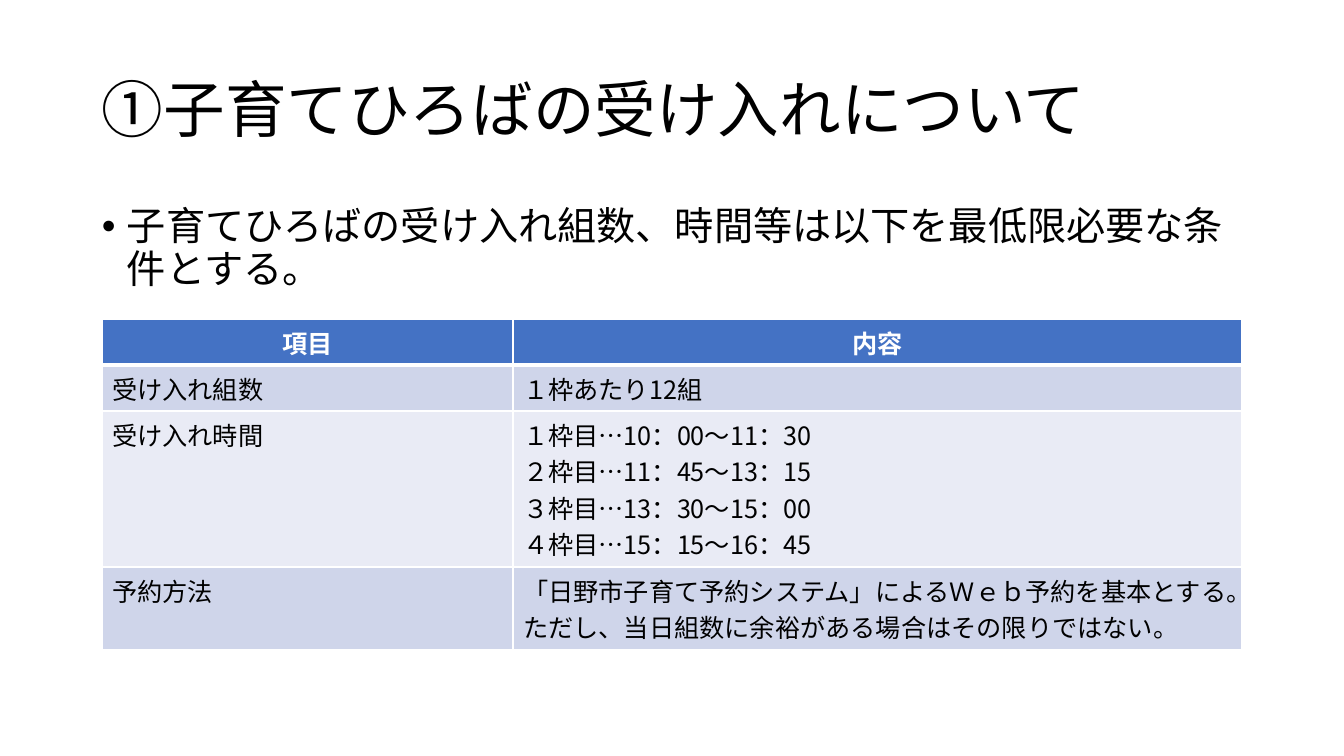
import pptx
import pptx.dml.color
import pptx.enum.text
import pptx.oxml
import pptx.oxml.ns
import pptx.util

FONT = "Noto Sans CJK JP"
ALIGN = pptx.enum.text.PP_ALIGN
ANCHOR = pptx.enum.text.MSO_ANCHOR
SCALE = 12192000 / 1344
WHITE, BLACK, BLUE = "FFFFFF", "000000", "4472C4"
BANDS = ["CFD5EA", "E9EBF5"]


def px(length):
    return pptx.util.Emu(round(length * SCALE))


def colour(code):
    return pptx.dml.color.RGBColor.from_string(code)


def assign(target, values):
    for name, value in values.items():
        setattr(target, name, value)


def element(markup):
    head, rest = markup.split(" ", 1)
    return pptx.oxml.parse_xml(f"{head} {pptx.oxml.ns.nsdecls('a')} {rest}")


class SlideBuilder:
    """Hold the style and the current page, and add elements to it."""

    def __init__(self, page):
        self.page = page

    def fill_text(self, frame, lines, size, code, bold=False, **layout):
        for index, line in enumerate(lines):
            para = frame.paragraphs[0] if index == 0 else frame.add_paragraph()
            assign(para, layout)
            span = para.add_run()
            span.text = line
            assign(span.font, {"name": FONT, "size": pptx.util.Pt(size), "bold": bold})
            span.font.color.rgb = colour(code)
            span.font._element.append(element(f'<a:ea typeface="{FONT}"/>'))

    def text(self, place, line, size, anchor, **layout):
        box = self.page.shapes.add_textbox(*map(px, place))
        assign(box.text_frame, {"word_wrap": True, "vertical_anchor": anchor})
        self.fill_text(box.text_frame, [line], size, BLACK, line_spacing=0.9, **layout)
        return box.text_frame.paragraphs[0]

    def bullet(self, para, indent):
        properties = para._p.get_or_add_pPr()
        properties.set("marL", str(px(indent)))
        properties.set("indent", str(-px(indent)))
        properties.append(element('<a:buFont typeface="Arial"/>'))
        properties.append(element('<a:buChar char="•"/>'))

    def borders(self, cell, widths):
        for side, width in widths.items():
            cell._tc.get_or_add_tcPr().append(element(
                f'<a:ln{side} w="{pptx.util.Pt(width)}"><a:solidFill>'
                f'<a:srgbClr val="{WHITE}"/></a:solidFill></a:ln{side}>'))

    def table(self, left, top, widths, heights, rows):
        place = map(px, (left, top, sum(widths), sum(heights)))
        grid = self.page.shapes.add_table(len(rows), len(widths), *place).table
        for column, width in zip(grid.columns, widths):
            column.width = px(width)
        for number, (row, height, entries) in enumerate(zip(grid.rows, heights, rows)):
            row.height = px(height)
            header = number == 0
            sides = {"L": 1, "R": 1, "T": 3 if number == 1 else 1, "B": 3 if header else 1}
            for cell, lines in zip(row.cells, entries):
                self.borders(cell, sides)
                cell.fill.solid()
                cell.fill.fore_color.rgb = colour(BLUE if header else BANDS[(number - 1) % 2])
                self.fill_text(cell.text_frame, lines, 18, WHITE if header else BLACK, header,
                               alignment=ALIGN.CENTER if header else ALIGN.LEFT)


def main():
    deck = pptx.Presentation()
    assign(deck, {"slide_width": px(1344), "slide_height": px(756)})
    builder = SlideBuilder(deck.slides.add_slide(deck.slide_layouts[6]))

    builder.text((92, 40, 1159, 146), "①子育てひろばの受け入れについて", 44, ANCHOR.MIDDLE)
    condition = builder.text(
        (92, 202, 1159, 480),
        "子育てひろばの受け入れ組数、時間等は以下を最低限必要な条件とする。",
        28, ANCHOR.TOP, space_before=pptx.util.Pt(10))
    builder.bullet(condition, 25)

    builder.table(102, 319, [411, 729], [46, 46, 156, 83], [
        (["項目"], ["内容"]),
        (["受け入れ組数"], ["１枠あたり12組"]),
        (["受け入れ時間"], ["１枠目…10：00～11：30", "２枠目…11：45～13：15",
                      "３枠目…13：30～15：00", "４枠目…15：15～16：45"]),
        (["予約方法"], ["「日野市子育て予約システム」によるＷｅｂ予約を基本とする。",
                    "ただし、当日組数に余裕がある場合はその限りではない。"]),
    ])
    deck.save("out.pptx")


if __name__ == "__main__":
    main()
